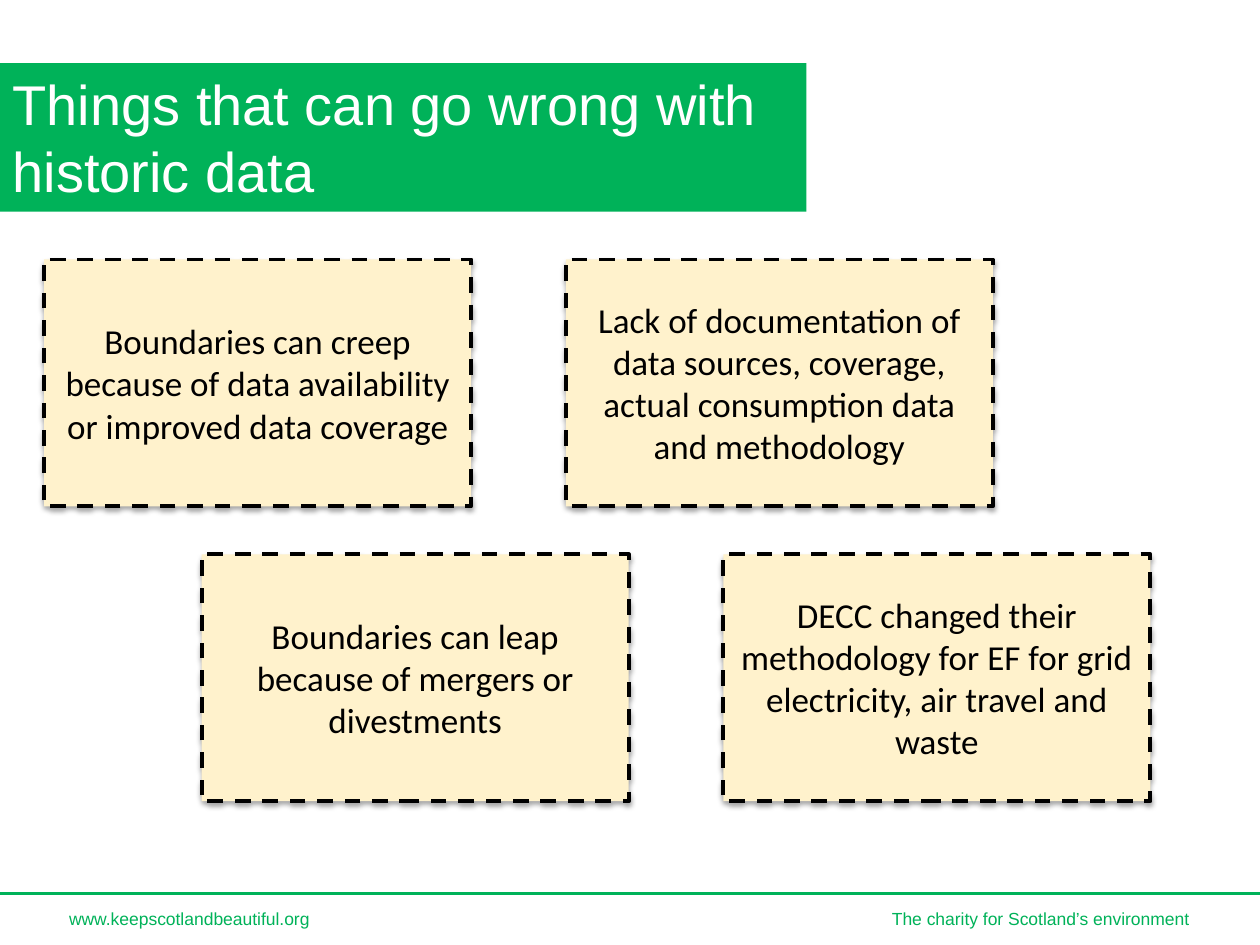
from lxml.etree import SubElement
from pptx import Presentation
from pptx.dml.color import RGBColor
from pptx.enum.dml import MSO_LINE_DASH_STYLE as Dash
from pptx.enum.shapes import MSO_CONNECTOR as Connector, MSO_SHAPE as Shape
from pptx.enum.text import MSO_ANCHOR as Anchor, MSO_AUTO_SIZE as AutoSize, PP_ALIGN as Align
from pptx.oxml.ns import qn
from pptx.util import Inches, Pt

GREEN = RGBColor(0x00, 0xB2, 0x59)
CREAM = RGBColor(0xFF, 0xF2, 0xCC)
BLACK = RGBColor(0x00, 0x00, 0x00)
WHITE = RGBColor(0xFF, 0xFF, 0xFF)

GRID_LEFT, GRID_TOP = 0.35, 2.06
COLUMN_STEP, ROW_STEP, ROW_SHIFT = 4.14, 2.34, 1.25
CARD_WIDTH, CARD_HEIGHT = 3.39, 1.96
BAND_TOP, BAND_HEIGHT = 0.5, 1.18

CARDS = [
    ["Boundaries can creep because of data availability or improved data coverage",
     "Lack of documentation of data sources, coverage, actual consumption data and methodology"],
    ["Boundaries can leap because of mergers or divestments",
     "DECC changed their methodology for EF for grid electricity, air travel and waste"],
]
FOOTERS = [
    ("www.keepscotlandbeautiful.org", 0.45, 2.13),
    ("The charity for Scotland’s environment", 6.98, 2.58),
]


def box(left, top, width, height):
    return [Inches(length) for length in (left, top, width, height)]


def write(frame, text, font_name, size, color, align=Align.LEFT):
    paragraph = frame.paragraphs[0]
    paragraph.alignment = align
    run = paragraph.add_run()
    run.text = text
    run.font.name = font_name
    run.font.size = Pt(size)
    run.font.color.rgb = color


def add_rectangle(slide, bounds, fill):
    shape = slide.shapes.add_shape(Shape.RECTANGLE, *bounds)
    shape.shadow.inherit = False
    shape.fill.solid()
    shape.fill.fore_color.rgb = fill
    shape.line.fill.background()
    return shape


def add_soft_shadow(shape):
    effects = shape.element.spPr.find(qn("a:effectLst"))
    shadow = SubElement(effects, qn("a:outerShdw"), blurRad=str(Pt(3.1)),
                        dist=str(Pt(1.8)), dir="5400000", rotWithShape="0")
    color = SubElement(shadow, qn("a:srgbClr"), val=str(BLACK))
    SubElement(color, qn("a:alpha"), val="35000")


def add_title(slide, text):
    band = add_rectangle(slide, box(0, BAND_TOP, 6.4, BAND_HEIGHT), GREEN)
    title = slide.shapes.title
    title.element.addprevious(band.element)
    title.left, title.top, title.width, title.height = box(0, BAND_TOP, 6.18, BAND_HEIGHT)
    frame = title.text_frame
    frame.auto_size = AutoSize.NONE
    frame.vertical_anchor = Anchor.TOP
    write(frame, text, "Arial", 32, WHITE)


def add_card(slide, column, row, text):
    left = GRID_LEFT + column * COLUMN_STEP + row * ROW_SHIFT
    top = GRID_TOP + row * ROW_STEP
    card = add_rectangle(slide, box(left, top, CARD_WIDTH, CARD_HEIGHT), CREAM)
    card.line.color.rgb = BLACK
    card.line.width = Pt(2.25)
    card.line.dash_style = Dash.DASH
    add_soft_shadow(card)
    card.text_frame.word_wrap = True
    card.text_frame.vertical_anchor = Anchor.MIDDLE
    write(card.text_frame, text, "Calibri", 20, BLACK, Align.CENTER)


def add_footer(slide, text, left, width):
    footer = slide.shapes.add_textbox(*box(left, 7.16, width, 0.27))
    footer.text_frame.word_wrap = False
    write(footer.text_frame, text, "Arial", 10, GREEN)


def add_footer_rule(slide):
    start, height, end, _ = box(0, 7.09, 10, 0)
    rule = slide.shapes.add_connector(Connector.STRAIGHT, start, height, end, height)
    rule.line.color.rgb = GREEN
    rule.line.width = Pt(2)
    SubElement(rule.element.spPr, qn("a:effectLst"))


def main():
    presentation = Presentation()
    presentation.slide_width = Inches(10)
    presentation.slide_height = Inches(7.5)
    slide = presentation.slides.add_slide(presentation.slide_layouts[5])
    add_title(slide, "Things that can go wrong with historic data")
    for row, texts in enumerate(CARDS):
        for column, text in enumerate(texts):
            add_card(slide, column, row, text)
    add_footer_rule(slide)
    for text, left, width in FOOTERS:
        add_footer(slide, text, left, width)
    presentation.save("out.pptx")


if __name__ == "__main__":
    main()
